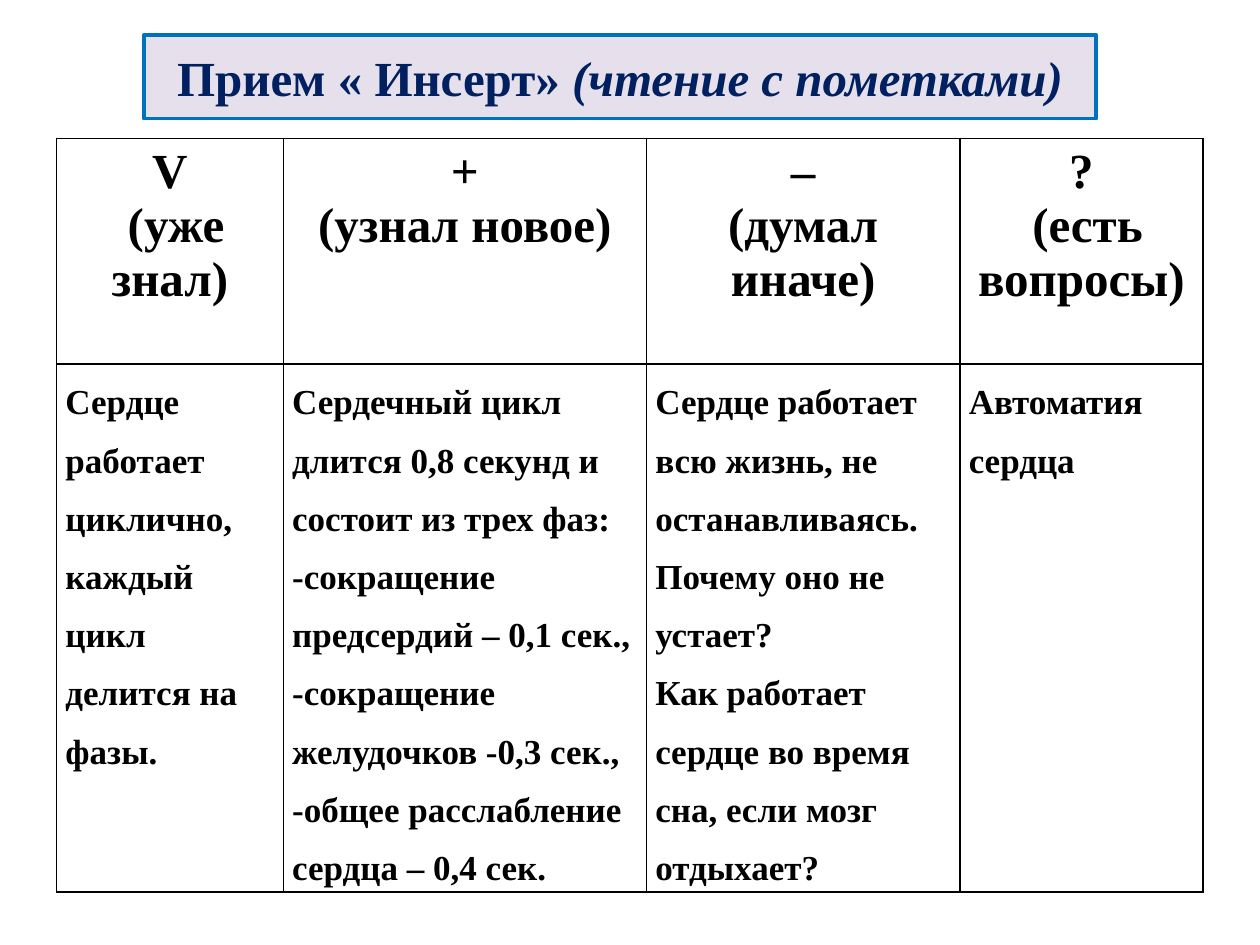
"""Build a slide with the reading-with-marks table about the heart."""
from lxml import etree
from pptx import Presentation
from pptx import util as u
from pptx.dml.color import RGBColor
from pptx.enum import text
from pptx.oxml import ns


def rgb(value):
    return RGBColor.from_string(value)


def add_text(p, content, size=28, color="000000", italic=None):
    r = p.add_run()
    r.text = content
    r.font.name = "Times New Roman"
    r.font.size = u.Pt(size)
    r.font.bold = True
    r.font.italic = italic
    r.font.color.rgb = rgb(color)


prs = Presentation()
prs.slide_width, prs.slide_height = u.Cm(25.4), u.Cm(19.05)
s = prs.slides.add_slide(prs.slide_layouts[5])

title = s.shapes.title
title.left, title.top = u.Cm(2.9), u.Cm(0.71)
title.width, title.height = u.Cm(19.2), u.Cm(1.68)
title.fill.solid()
title.fill.fore_color.rgb = rgb("E6E0EC")
title.line.color.rgb = rgb("0070C0")
title.line.width = u.Pt(2.25)
tf = title.text_frame
tf.word_wrap = True
tf.auto_size = text.MSO_AUTO_SIZE.NONE
tf.vertical_anchor = text.MSO_ANCHOR.MIDDLE
p = tf.paragraphs[0]
p.alignment = text.PP_ALIGN.CENTER
add_text(p, "Прием « Инсерт» ", color="002060")
add_text(p, "(чтение с пометками)", color="002060", italic=True)

rows = [
    [
        ["V", " (уже знал)"],
        ["+", "(узнал новое)"],
        ["‒", "(думал иначе)"],
        ["?", " (есть вопросы)"],
    ],
    [
        ["Сердце работает циклично, каждый цикл делится на фазы."],
        [
            "Сердечный цикл длится 0,8 секунд и состоит из трех фаз:",
            "-сокращение предсердий – 0,1 сек.,",
            "-сокращение желудочков -0,3 сек.,",
            "-общее расслабление сердца – 0,4 сек.",
        ],
        [
            "Сердце работает всю жизнь, не останавливаясь. Почему оно не устает?",
            "Как работает сердце во время сна, если мозг отдыхает?",
        ],
        ["Автоматия сердца"],
    ],
]
widths = [4.57, 7.32, 6.32, 4.9]
heights = [4.55, 10.64]

table = s.shapes.add_table(len(heights), len(widths), u.Cm(1.14), u.Cm(2.79),
                           u.Cm(sum(widths)), u.Cm(sum(heights))).table
table.horz_banding = False
for column, width in zip(table.columns, widths):
    column.width = u.Cm(width)
for row, height in zip(table.rows, heights):
    row.height = u.Cm(height)

for i, row in enumerate(rows):
    header = i == 0
    for j, lines in enumerate(row):
        cell = table.cell(i, j)
        cell.margin_left = cell.margin_right = u.Cm(0.25 if header else 0.18)
        cell.margin_top = cell.margin_bottom = u.Cm(0.13 if header else 0)
        tcPr = cell._tc.get_or_add_tcPr()
        for side in ("lnL", "lnR", "lnT", "lnB"):
            ln = etree.SubElement(tcPr, ns.qn(f"a:{side}"), w=str(u.Pt(1)))
            fill = etree.SubElement(ln, ns.qn("a:solidFill"))
            etree.SubElement(fill, ns.qn("a:srgbClr"), val="000000")
        cell.fill.background()
        tf = cell.text_frame
        for k, line in enumerate(lines):
            p = tf.add_paragraph() if k else tf.paragraphs[0]
            p.alignment = text.PP_ALIGN.CENTER if header else text.PP_ALIGN.LEFT
            p.line_spacing = 1.0 if header else 1.5
            add_text(p, line, size=28 if header else 20)

prs.save("out.pptx")
